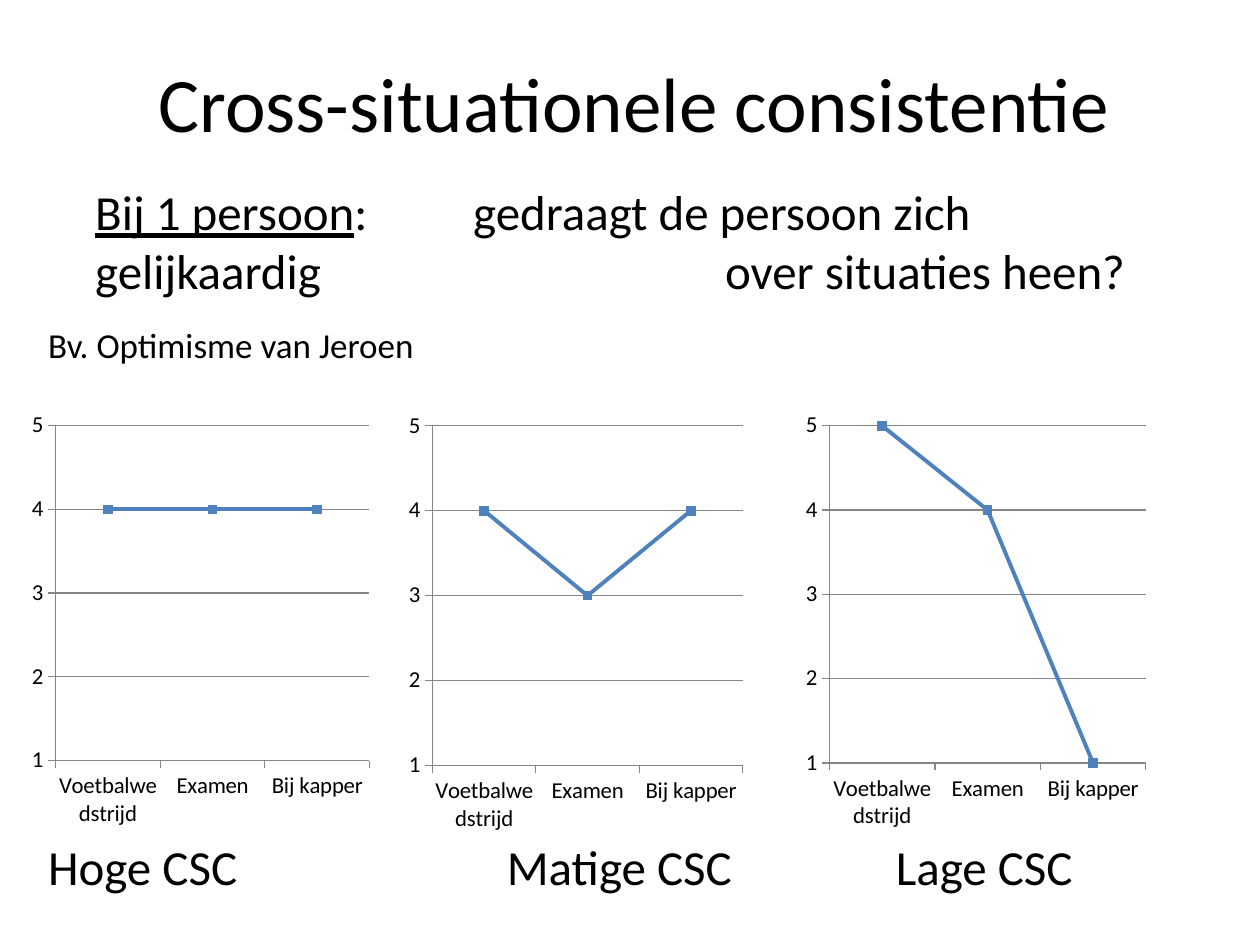
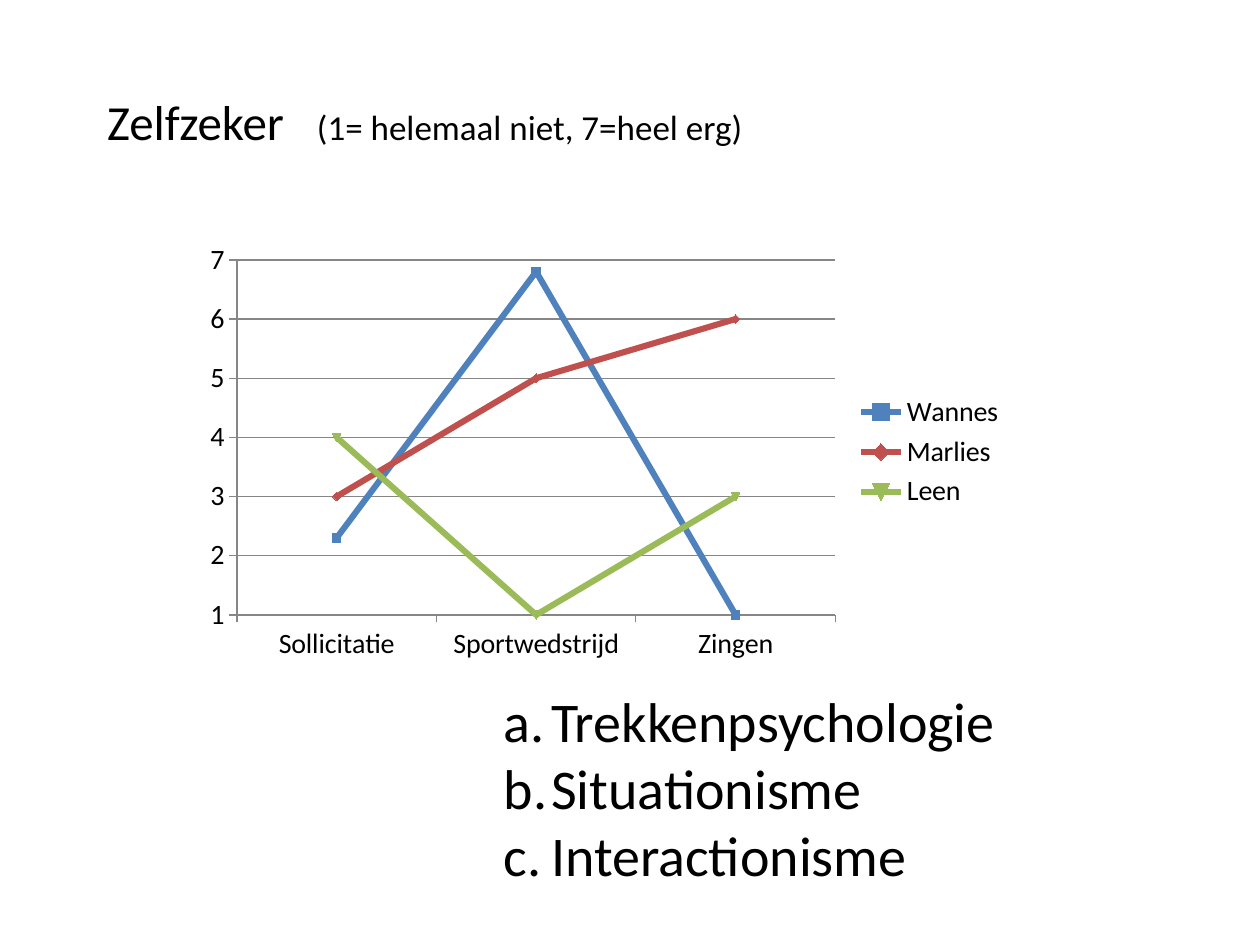
from lxml.etree import SubElement
from pptx import Presentation
from pptx.chart.data import CategoryChartData
from pptx.dml.color import RGBColor
from pptx.enum.chart import XL_CHART_TYPE, XL_LEGEND_POSITION
from pptx.enum.text import MSO_ANCHOR, PP_ALIGN
from pptx.oxml.ns import qn
from pptx.util import Cm, Pt

STACKED = XL_CHART_TYPE.LINE_MARKERS_STACKED
MARKERS = XL_CHART_TYPE.LINE_MARKERS
RIGHT = XL_LEGEND_POSITION.RIGHT
MIDDLE, TOP = MSO_ANCHOR.MIDDLE, MSO_ANCHOR.TOP
LEFT, CENTER = PP_ALIGN.LEFT, PP_ALIGN.CENTER

FONT = "Calibri"
BLACK, GREY = "000000", "868686"
COLORS = ["4F81BD", "C0504D", "9BBB59"]

# A run is (text, size, underlined); a line is (runs, tab stop in cm).
TITLE = [([("Cross-situationele consistentie", 44, False)], None)]
INTRO = [
    ([("Bij 1 persoon", 28, True),
      (": \tgedraagt de persoon zich", 28, False)], 7.62),
    ([("gelijkaardig\tover situaties heen?", 28, False)], 12.7),
]
EXAMPLE = [([("Bv. Optimisme van Jeroen", 20, False)], None)]

MOMENTS = ["Voetbalwedstrijd", "Examen", "Bij kapper"]
# label, label left, chart left, chart width, chart height, values
LEVELS = [
    ("Hoge CSC", 0.97, 0.5, 7.09, 8.74, [4, 4, 4]),
    ("Matige CSC", 10.22, 8.1, 7.01, 8.84, [4, 3, 4]),
    ("Lage CSC", 18.06, 16.1, 7.14, 8.79, [5, 4, 1]),
]
CHART_TOP, LABEL_TOP = 8.13, 16.87

HEADING = [([("Zelfzeker", 28, False),
             ("\t(1= helemaal niet, 7=heel erg)", 20, False)], 4.23)]
TASKS = ["Sollicitatie", "Sportwedstrijd", "Zingen"]
PEOPLE = {"Wannes": [2.3, 6.8, 1], "Marlies": [3, 5, 6], "Leen": [4, 1, 3]}
VIEWS = ["Trekkenpsychologie", "Situationisme", "Interactionisme"]


def rgb(color):
    return RGBColor.from_string(color)


def style(font, size):
    font.name, font.size = FONT, Pt(size)
    font.color.rgb = rgb(BLACK)


def add_text(slide, box, lines, align=LEFT, anchor=TOP, letters=False):
    """Add lines of runs; letters numbers the lines a., b., c."""
    frame = slide.shapes.add_textbox(*map(Cm, box)).text_frame
    frame.word_wrap = True
    frame.vertical_anchor = anchor
    frame.margin_left = frame.margin_right = 0
    frame.margin_top = frame.margin_bottom = 0
    for i, (runs, stop) in enumerate(lines):
        para = frame.add_paragraph() if i else frame.paragraphs[0]
        para.alignment = align
        props = para._p.get_or_add_pPr()
        if letters:
            props.set("marL", str(Cm(0.95)))
            props.set("indent", str(-Cm(0.95)))
            SubElement(props, qn("a:buFont"), typeface="+mj-lt")
            SubElement(props, qn("a:buAutoNum"), type="alphaLcPeriod")
        if stop:
            tabs = SubElement(props, qn("a:tabLst"))
            SubElement(tabs, qn("a:tab"), pos=str(Cm(stop)), algn="l")
        for words, size, under in runs:
            run = para.add_run()
            run.text = words
            style(run.font, size)
            if under:
                run.font.underline = True


def add_lines(slide, box, kind, cats, rows, top, size, width):
    """Add a line chart whose value axis runs from 1 to top."""
    data = CategoryChartData()
    data.categories = cats
    for name, vals in rows.items():
        data.add_series(name, vals)
    chart = slide.shapes.add_chart(kind, *map(Cm, box), data).chart
    chart.has_title = False
    style(chart.font, 10)
    chart.has_legend = len(rows) > 1
    if chart.has_legend:
        chart.legend.position = RIGHT
        chart.legend.include_in_layout = False
        style(chart.legend.font, size)
    scale = chart.value_axis
    scale.minimum_scale, scale.maximum_scale = 1, top
    scale.major_unit = 1
    scale.has_major_gridlines = True
    for axis in (chart.category_axis, scale):
        style(axis.tick_labels.font, size)
    for part in (chart.category_axis, scale, scale.major_gridlines):
        part.format.line.color.rgb = rgb(GREY)
        part.format.line.width = Pt(0.75)
    for row, color in zip(chart.plots[0].series, COLORS):
        row.smooth = False
        row.format.line.color.rgb = rgb(color)
        row.format.line.width = Pt(width)
        row.marker.size = 5
        fill = row.marker.format.fill
        fill.solid()
        fill.fore_color.rgb = rgb(color)
        row.marker.format.line.color.rgb = rgb(color)


def add_levels(slide):
    add_text(slide, (1.27, 0.76, 23.04, 2.57), TITLE, CENTER, MIDDLE)
    add_text(slide, (1.92, 3.66, 22, 2.5), INTRO)
    add_text(slide, (0.97, 6.53, 12, 0.9), EXAMPLE)
    for label, left, x, wide, high, vals in LEVELS:
        add_lines(slide, (x, CHART_TOP, wide, high), STACKED, MOMENTS,
                  {"Series 1": vals}, 5, 13, 2.25)
        add_text(slide, (left, LABEL_TOP, 6, 1.25),
                 [([(label, 28, False)], None)])


def add_people(slide):
    add_text(slide, (2.16, 1.85, 16, 1.25), HEADING)
    add_lines(slide, (3.91, 4.72, 16.61, 8.79), MARKERS, TASKS, PEOPLE,
              7, 16, 3.5)
    views = [([(view, 32, False)], None) for view in VIEWS]
    add_text(slide, (10.16, 13.84, 12.5, 4.2), views, letters=True)


def main():
    deck = Presentation()
    deck.slide_width, deck.slide_height = Cm(25.4), Cm(19.05)
    blank = deck.slide_layouts[6]
    for build in (add_levels, add_people):
        build(deck.slides.add_slide(blank))
    deck.save("out.pptx")


if __name__ == "__main__":
    main()
